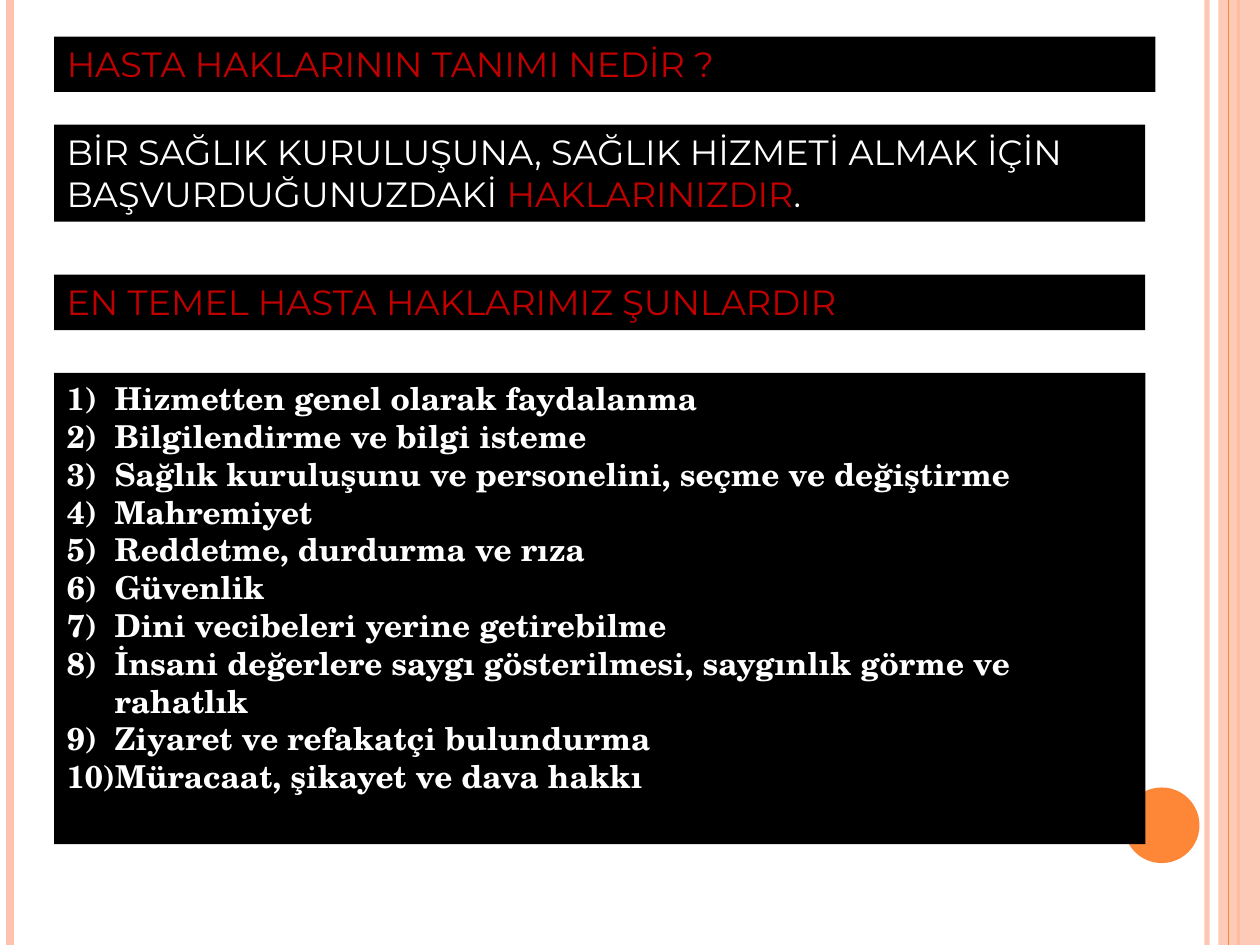
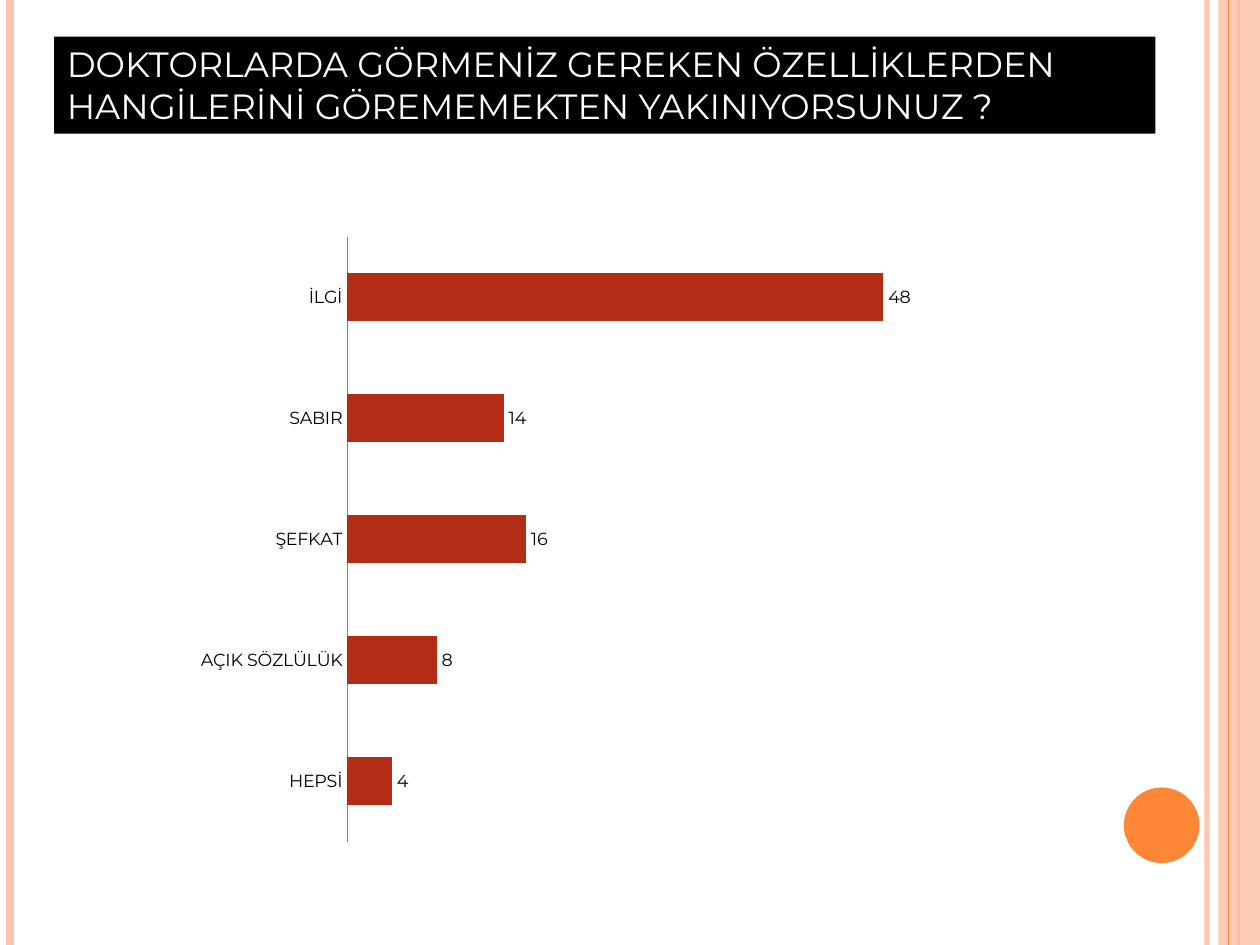
from dataclasses import dataclass

import lxml.etree
import pptx
import pptx.chart.data
import pptx.dml.color
import pptx.enum.chart
import pptx.enum.shapes
import pptx.enum.text
import pptx.oxml
import pptx.oxml.ns
import pptx.util
from pptx.util import Inches

COLORS = {
    "black": "000000",
    "white": "FFFFFF",
    "red": "C00000",
    "peach": "FEC3AE",
    "orange": "FE8637",
    "bar": "B32C16",
    "axis": "808080",
}
HEADING_FONT = "Montserrat"
LIST_FONT = "TeX Gyre Schola"
SLIDE_WIDTH, SLIDE_HEIGHT = 10, 7.5
LEFT = 0.43
TITLE_TOP, TITLE_WIDTH = 0.29, 8.74
BODY_WIDTH = 8.66
ONE_LINE, TWO_LINES = 0.44, 0.77
LIST_INDENT = 0.38


@dataclass
class Rule:
    """A vertical line over the full height of the slide."""
    x: float
    color: str
    width: float
    opacity: int = 100


@dataclass
class Piece:
    text: str
    color: str


@dataclass
class Panel:
    """The place of a black text panel."""
    top: float
    width: float
    height: float


RULES_BEHIND_BAND = [
    Rule(9.58, "peach", 3, 93),
    Rule(0.08, "peach", 4.5),
    Rule(9.83, "orange", 1.5),
]
RULE_ON_BAND = Rule(9.75, "orange", 0.75)

RIGHTS = [
    "Hizmetten genel olarak faydalanma",
    "Bilgilendirme ve bilgi isteme",
    "Sağlık kuruluşunu ve personelini, seçme ve değiştirme",
    "Mahremiyet",
    "Reddetme, durdurma ve rıza",
    "Güvenlik",
    "Dini vecibeleri yerine getirebilme",
    "İnsani değerlere saygı gösterilmesi, saygınlık görme ve rahatlık",
    "Ziyaret ve refakatçi bulundurma",
    "Müracaat, şikayet ve dava hakkı",
]
COMPLAINTS = {"HEPSİ": 4, "AÇIK SÖZLÜLÜK": 8, "ŞEFKAT": 16, "SABIR": 14, "İLGİ": 48}


def rgb(name: str) -> pptx.dml.color.RGBColor:
    return pptx.dml.color.RGBColor.from_string(COLORS[name])


def paint(fill, color: str) -> None:
    fill.solid()
    fill.fore_color.rgb = rgb(color)


def set_opacity(shape, percent: int) -> None:
    """Make the first solid colour of the shape partly transparent."""
    color = shape.element.xpath(".//a:srgbClr")[0]
    alpha = lxml.etree.SubElement(color, pptx.oxml.ns.qn("a:alpha"))
    alpha.set("val", str(percent * 1000))


def add_rule(shapes, rule: Rule):
    line = shapes.add_connector(
        pptx.enum.shapes.MSO_CONNECTOR.STRAIGHT,
        Inches(rule.x), 0, Inches(rule.x), Inches(SLIDE_HEIGHT))
    line.line.color.rgb = rgb(rule.color)
    line.line.width = pptx.util.Pt(rule.width)
    lxml.etree.SubElement(line.element.spPr, pptx.oxml.ns.qn("a:effectLst"))
    if rule.opacity < 100:
        set_opacity(line, rule.opacity)
    return line


def add_plain_shape(shapes, kind, left: float, top: float, width: float,
                    height: float, color: str):
    shape = shapes.add_shape(
        kind, Inches(left), Inches(top), Inches(width), Inches(height))
    shape.shadow.inherit = False
    paint(shape.fill, color)
    shape.line.fill.background()
    return shape


def decorate_master(presentation, slide) -> None:
    """Draw the side bands and the disc, then move them to the slide master."""
    shapes = slide.shapes
    preset = pptx.enum.shapes.MSO_SHAPE
    decorations = [add_rule(shapes, rule) for rule in RULES_BEHIND_BAND]
    band = add_plain_shape(
        shapes, preset.RECTANGLE, 9.67, 0, SLIDE_WIDTH - 9.67, SLIDE_HEIGHT, "peach")
    set_opacity(band, 87)
    decorations += [
        band,
        add_rule(shapes, RULE_ON_BAND),
        add_plain_shape(shapes, preset.OVAL, 8.92, 6.25, 0.6, 0.6, "orange"),
    ]
    master_tree = presentation.slide_master.shapes.element
    for number, shape in enumerate(decorations, start=100):
        shape.element.xpath(".//p:cNvPr")[0].set("id", str(number))
        master_tree.append(shape.element)


def format_panel(shape, panel: Panel):
    """Place a text shape as a black panel and return its text frame."""
    shape.left, shape.top = Inches(LEFT), Inches(panel.top)
    shape.width, shape.height = Inches(panel.width), Inches(panel.height)
    paint(shape.fill, "black")
    frame = shape.text_frame
    frame.word_wrap = True
    frame.auto_size = pptx.enum.text.MSO_AUTO_SIZE.NONE
    frame.vertical_anchor = pptx.enum.text.MSO_ANCHOR.TOP
    return frame


def format_paragraph(paragraph, font_name: str, size: int, color: str,
                     bold: bool = False) -> None:
    paragraph.alignment = pptx.enum.text.PP_ALIGN.LEFT
    paragraph.space_before = pptx.util.Pt(0)
    font = paragraph.font
    font.name, font.size, font.bold = font_name, pptx.util.Pt(size), bold
    font.color.rgb = rgb(color)


def write_heading(shape, panel: Panel, pieces: list[Piece]) -> None:
    paragraph = format_panel(shape, panel).paragraphs[0]
    main_color = pieces[0].color
    format_paragraph(paragraph, HEADING_FONT, 20, main_color)
    for piece in pieces:
        run = paragraph.add_run()
        run.text = piece.text
        if piece.color != main_color:
            run.font.color.rgb = rgb(piece.color)


def number_paragraph(paragraph) -> None:
    properties = paragraph._p.get_or_add_pPr()
    properties.set("marL", str(Inches(LIST_INDENT)))
    properties.set("indent", str(-Inches(LIST_INDENT)))
    bullet_font = lxml.etree.SubElement(properties, pptx.oxml.ns.qn("a:buFont"))
    bullet_font.set("typeface", "+mj-lt")
    numbering = lxml.etree.SubElement(properties, pptx.oxml.ns.qn("a:buAutoNum"))
    numbering.set("type", "arabicParenR")


def write_numbered_list(shape, panel: Panel, items: list[str]) -> None:
    frame = format_panel(shape, panel)
    frame.text = "\n".join(items)
    for paragraph in frame.paragraphs:
        number_paragraph(paragraph)
        format_paragraph(paragraph, LIST_FONT, 18, "white", bold=True)


def add_text_panel(slide, panel: Panel, pieces: list[Piece]) -> None:
    write_heading(slide.shapes.add_textbox(0, 0, 0, 0), panel, pieces)


def add_complaint_chart(slide) -> None:
    data = pptx.chart.data.CategoryChartData()
    data.categories = list(COMPLAINTS)
    data.add_series("Series 1", list(COMPLAINTS.values()))
    chart = slide.shapes.add_chart(
        pptx.enum.chart.XL_CHART_TYPE.BAR_CLUSTERED,
        Inches(1.46), Inches(1.78), Inches(6.75), Inches(5), data).chart
    chart.has_legend = chart.has_title = False
    chart.font.name, chart.font.size = HEADING_FONT, pptx.util.Pt(10)
    chart.font.color.rgb = rgb("black")

    chart.value_axis.visible = False
    chart.value_axis.has_major_gridlines = False
    chart.value_axis.minimum_scale, chart.value_axis.maximum_scale = 0, 60
    category_axis = chart.category_axis
    category_axis.major_tick_mark = pptx.enum.chart.XL_TICK_MARK.NONE
    category_axis.format.line.color.rgb = rgb("axis")

    plot = chart.plots[0]
    plot.gap_width, plot.overlap = 150, -25
    plot.vary_by_categories = False
    paint(plot.series[0].format.fill, "bar")
    plot.has_data_labels = True
    plot.data_labels.show_value = True
    plot.data_labels.position = pptx.enum.chart.XL_LABEL_POSITION.OUTSIDE_END


def build_rights_slide(slide) -> None:
    write_heading(slide.shapes.title, Panel(TITLE_TOP, TITLE_WIDTH, ONE_LINE),
                  [Piece("HASTA HAKLARININ TANIMI NEDİR ?", "red")])
    add_text_panel(slide, Panel(0.99, BODY_WIDTH, TWO_LINES), [
        Piece("BİR SAĞLIK KURULUŞUNA, SAĞLIK HİZMETİ ALMAK İÇİN BAŞVURDUĞUNUZDAKİ ",
              "white"),
        Piece("HAKLARINIZDIR", "red"),
        Piece(".", "white"),
    ])
    add_text_panel(slide, Panel(2.18, BODY_WIDTH, ONE_LINE),
                   [Piece("EN TEMEL HASTA HAKLARIMIZ ŞUNLARDIR", "red")])
    write_numbered_list(slide.placeholders[1], Panel(2.96, BODY_WIDTH, 3.74), RIGHTS)


def build_complaint_slide(slide) -> None:
    write_heading(
        slide.shapes.title, Panel(TITLE_TOP, TITLE_WIDTH, TWO_LINES),
        [Piece("DOKTORLARDA GÖRMENİZ GEREKEN ÖZELLİKLERDEN "
               "HANGİLERİNİ GÖREMEMEKTEN YAKINIYORSUNUZ ?", "white")])
    add_complaint_chart(slide)


def main() -> None:
    presentation = pptx.Presentation()
    presentation.slide_width = Inches(SLIDE_WIDTH)
    presentation.slide_height = Inches(SLIDE_HEIGHT)
    layouts = presentation.slide_layouts
    rights_slide = presentation.slides.add_slide(layouts.get_by_name("Title and Content"))
    complaint_slide = presentation.slides.add_slide(layouts.get_by_name("Title Only"))
    decorate_master(presentation, rights_slide)
    build_rights_slide(rights_slide)
    build_complaint_slide(complaint_slide)
    presentation.save("out.pptx")


if __name__ == "__main__":
    main()
